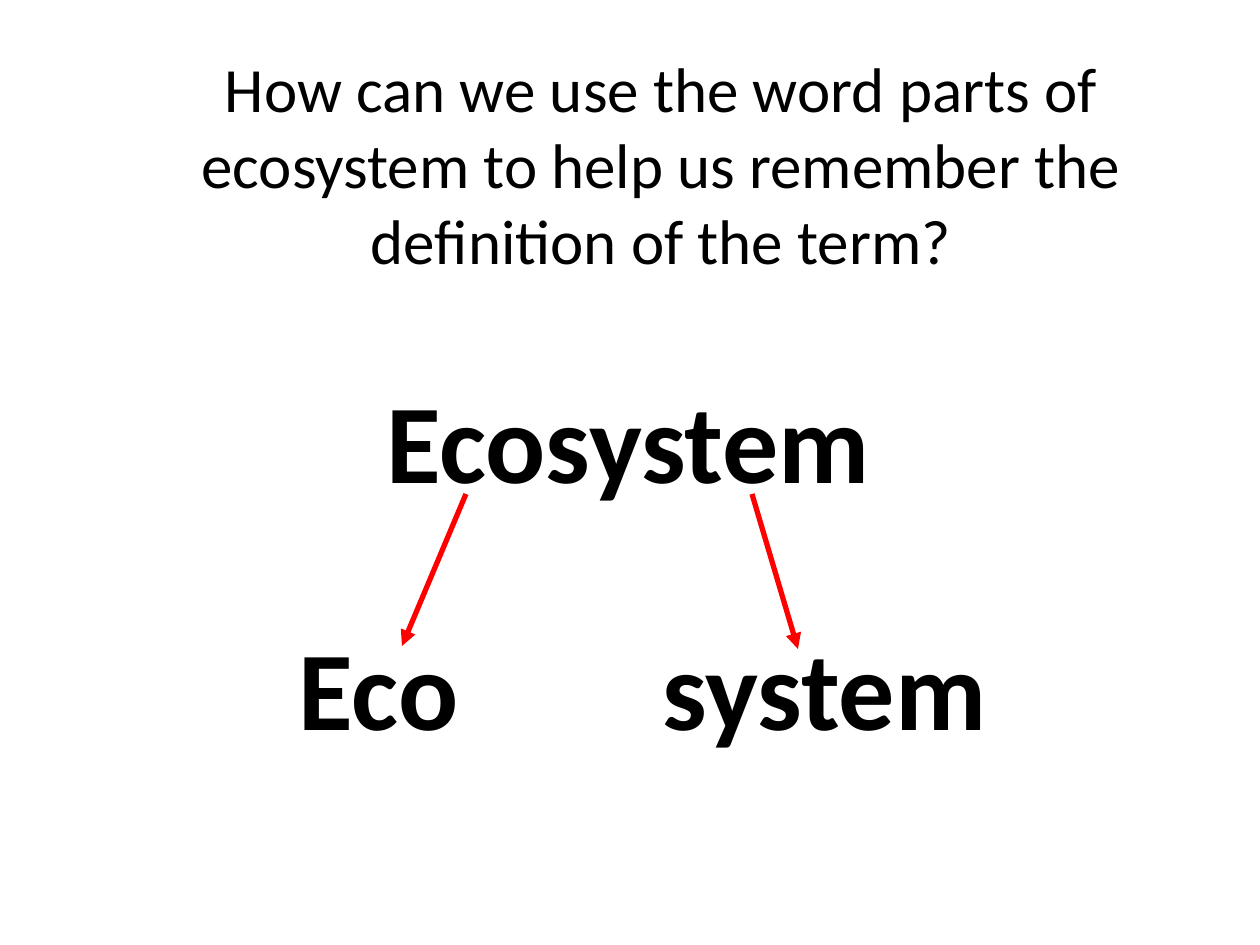
from pptx import Presentation
from pptx.dml.color import RGBColor
from pptx.enum.shapes import MSO_CONNECTOR as Connector
from pptx.enum.text import MSO_AUTO_SIZE as AutoSize, PP_ALIGN as Align
from pptx.oxml.ns import qn
from pptx.util import Inches, Pt
from lxml.etree import SubElement

BLACK = RGBColor(0x00, 0x00, 0x00)
RED = RGBColor(0xFF, 0x00, 0x00)


def px(length):
    return Inches(length / 126)


def add_text(text, left, top, width, height, size, bold, inset):
    box = slide.shapes.add_textbox(px(left), px(top), px(width), px(height))
    frame = box.text_frame
    frame.word_wrap = True
    frame.auto_size = AutoSize.SHAPE_TO_FIT_TEXT
    frame.margin_top = frame.margin_bottom = px(inset)
    paragraph = frame.paragraphs[0]
    paragraph.text = text
    paragraph.alignment = Align.CENTER
    font = paragraph.font
    font.name = "Calibri"
    font.size = Pt(size)
    font.bold = bold
    font.color.rgb = BLACK


deck = Presentation()
deck.slide_width, deck.slide_height = px(1260), px(945)
slide = deck.slides.add_slide(deck.slide_layouts[6])

# Question
add_text("How can we use the word parts of ecosystem to help us remember "
         "the definition of the term?", 101, 44, 1120, 242, 36, False, 6)

# Whole word above its two parts
for word, left, top, width in [
    ("Ecosystem", 257, 359, 742),
    ("Eco", 199, 606, 359),
    ("system", 588, 606, 473),
]:
    add_text(word, left, top, width, 161, 64, True, 13)

# Arrows from the word to each part
for start_x, end_x, end_y in [(466, 402, 646), (752, 798, 649)]:
    arrow = slide.shapes.add_connector(
        Connector.STRAIGHT, px(start_x), px(494), px(end_x), px(end_y))
    arrow.line.color.rgb = RED
    arrow.line.width = Pt(3)
    SubElement(arrow.line._get_or_add_ln(), qn("a:tailEnd"), type="triangle")
    SubElement(arrow._element.spPr, qn("a:effectLst"))

deck.save("out.pptx")
